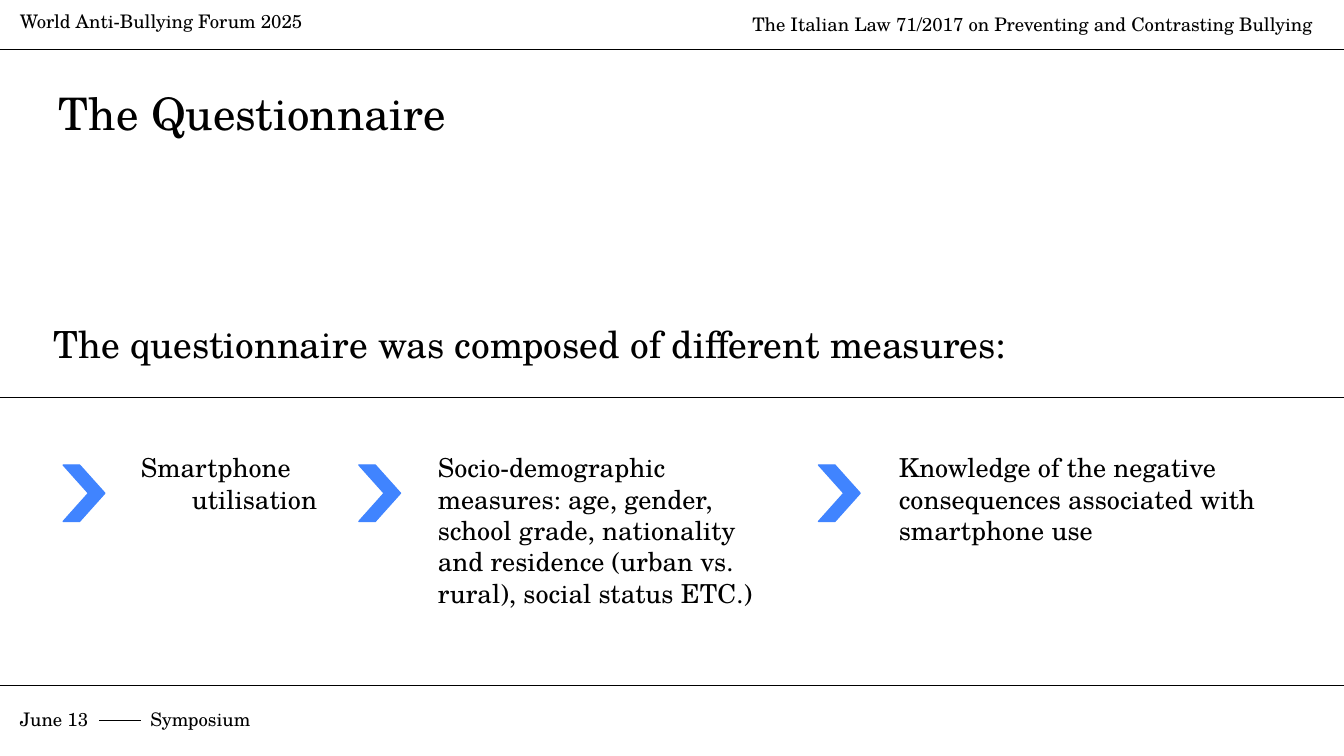
from lxml import etree
from pptx import Presentation
from pptx.dml.color import RGBColor
from pptx.enum.shapes import MSO_CONNECTOR, MSO_SHAPE
from pptx.enum.text import PP_ALIGN
from pptx.oxml.ns import qn
from pptx.util import Inches, Pt

LINE = MSO_CONNECTOR.STRAIGHT
CHEVRON = MSO_SHAPE.CHEVRON
LEFT, RIGHT = PP_ALIGN.LEFT, PP_ALIGN.RIGHT
BLACK = RGBColor(0x00, 0x00, 0x00)
BLUE = RGBColor(0x40, 0x84, 0xFF)


class Deck:
    """Holds the style and the current slide."""

    font = "TeX Gyre Schola"
    inset = Inches(0.1)
    weight = Pt(0.75)

    def __init__(self, slide):
        self.shapes = slide.shapes

    def rule(self, left, right, y):
        line = self.shapes.add_connector(
            LINE, Inches(left), Inches(y), Inches(right), Inches(y))
        line.line.color.rgb = BLACK
        line.line.width = self.weight
        etree.SubElement(line._element.spPr, qn("a:effectLst"))

    def text(self, words, box, size, align=LEFT, space=None, hang=0, tab=0):
        frame = self.shapes.add_textbox(*map(Inches, box)).text_frame
        frame.word_wrap = True
        frame.margin_left = frame.margin_right = self.inset
        frame.margin_top = frame.margin_bottom = self.inset
        para = frame.paragraphs[0]
        para.alignment = align
        para.line_spacing = space
        props = para._p.get_or_add_pPr()
        if hang:
            props.set("marL", str(Inches(hang)))
            props.set("indent", str(-Inches(hang)))
        if tab:
            stops = etree.SubElement(props, qn("a:tabLst"))
            etree.SubElement(stops, qn("a:tab"), pos=str(Inches(tab)), algn="l")
        run = para.add_run()
        run.text = words
        run.font.name = self.font
        run.font.size = Pt(size)
        run.font.color.rgb = BLACK

    def arrow(self, left, top):
        shape = self.shapes.add_shape(
            CHEVRON, Inches(left), Inches(top), Inches(0.31), Inches(0.42))
        shape.adjustments[0] = 0.607
        shape.shadow.inherit = False
        shape.fill.solid()
        shape.fill.fore_color.rgb = BLUE
        shape.line.color.rgb = BLUE
        shape.line.width = self.weight


def main():
    prs = Presentation()
    prs.slide_width = Inches(10)
    prs.slide_height = prs.slide_width * 9 // 16
    deck = Deck(prs.slides.add_slide(prs.slide_layouts[6]))

    for y in (0.37, 2.96, 5.1):
        deck.rule(-0.02, 10.02, y)

    deck.text("World Anti-Bullying Forum 2025", (0.05, 0, 3.03, 0.16), 10)
    deck.text("The Italian Law 71/2017 on Preventing and Contrasting Bullying",
              (5.14, 0.01, 4.72, 0.16), 10, align=RIGHT, space=1.15)
    deck.text("June 13\tSymposium", (0.05, 5.18, 2.17, 0.3), 10, tab=0.97)
    deck.rule(0.74, 1.05, 5.36)

    deck.text("The Questionnaire", (0.34, 0.54, 9.32, 0.65), 24)
    deck.text("The questionnaire was composed of different measures:",
              (0.3, 2.29, 9.14, 0.52), 20)

    items = (
        (0.47, 0.95, 1.59, 0.67, 0.38, "Smartphone utilisation"),
        (2.67, 3.16, 2.74, 1.38, 0,
         "Socio-demographic measures: age, gender, school grade, nationality "
         "and residence (urban vs. rural), social status ETC.)"),
        (6.09, 6.59, 3.07, 0.91, 0,
         "Knowledge of the negative consequences associated with "
         "smartphone use"),
    )
    for mark, left, width, height, hang, words in items:
        deck.arrow(mark, 3.46)
        deck.text(words, (left, 3.26, width, height), 14, hang=hang)

    prs.save("out.pptx")


if __name__ == "__main__":
    main()
